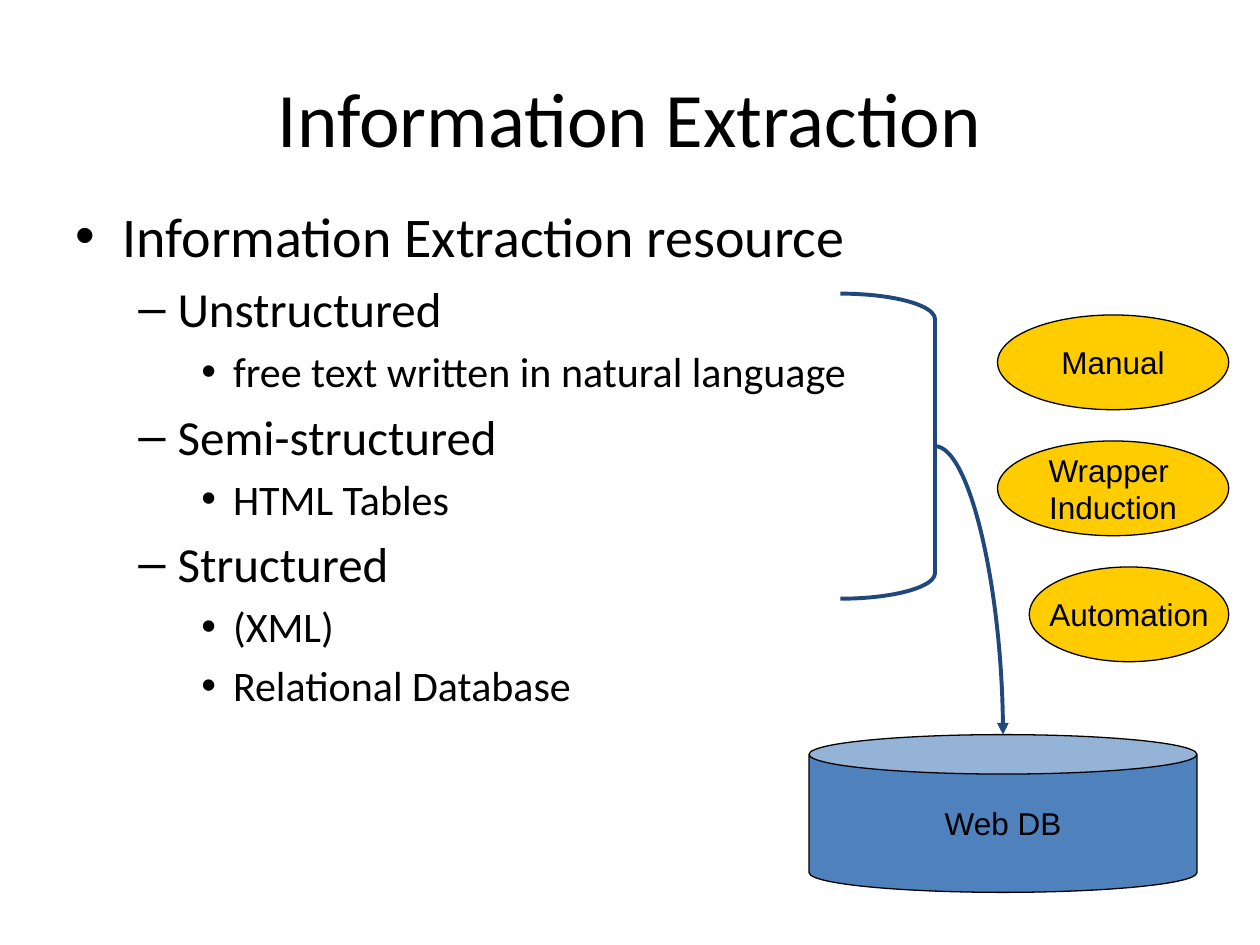
from collections import namedtuple
from dataclasses import dataclass

from lxml import etree
from pptx import Presentation
from pptx.dml.color import RGBColor
from pptx.enum.shapes import MSO_CONNECTOR as Connector, MSO_SHAPE as Shape
from pptx.enum.text import MSO_ANCHOR as Anchor, PP_ALIGN as Align
from pptx.oxml.ns import qn
from pptx.util import Cm, Pt

Box = namedtuple("Box", "left top width height")
Level = namedtuple("Level", "bullet size margin hanging")


@dataclass(frozen=True)
class Theme:
    text: RGBColor = RGBColor(0, 0, 0)
    database: RGBColor = RGBColor(0x4F, 0x81, 0xBD)
    method: RGBColor = RGBColor(0xFF, 0xCC, 0x00)
    flow: RGBColor = RGBColor(0x1F, 0x49, 0x7D)
    body_font: str = "Calibri"
    label_font: str = "Arial"
    title_size: int = 44
    label_size: int = 18
    outline_width: float = 0.75
    flow_width: float = 2.25
    levels: tuple = (
        Level("•", 32, 0.95, 0.95),
        Level("–", 28, 2.06, 0.79),
        Level("•", 24, 3.18, 0.64),
    )


THEME = Theme()

RESOURCES = (
    (0, "Information Extraction resource"),
    (1, "Unstructured"),
    (2, "free text written in natural language"),
    (1, "Semi-structured"),
    (2, "HTML Tables"),
    (1, "Structured"),
    (2, "(XML)"),
    (2, "Relational Database"),
)
METHODS = (  # label lines and ellipse width in cm
    (("Manual",), 4.66),
    (("Wrapper ", "Induction"), 4.66),
    (("Automation",), 4.02),
)


def in_cm(box):
    return [Cm(length) for length in box]


def write_text(paragraph, text, *, size, font, align=Align.LEFT, space_before=0):
    paragraph.text = text
    paragraph.alignment = align
    paragraph.space_before = Pt(space_before)
    paragraph.font.size = Pt(size)
    paragraph.font.name = font
    paragraph.font.color.rgb = THEME.text


def next_paragraph(frame, index):
    return frame.add_paragraph() if index else frame.paragraphs[0]


def set_bullet(paragraph, level):
    properties = paragraph._p.get_or_add_pPr()
    properties.set("marL", str(Cm(level.margin)))
    properties.set("indent", str(-Cm(level.hanging)))
    etree.SubElement(properties, qn("a:buFont"), typeface="Arial")
    etree.SubElement(properties, qn("a:buChar"), char=level.bullet)


def style_line(line, color, width):
    line.color.rgb = color
    line.width = Pt(width)


def add_title(slide, box, text):
    title = slide.shapes.title
    title.left, title.top, title.width, title.height = in_cm(box)
    title.text_frame.vertical_anchor = Anchor.MIDDLE
    write_text(title.text_frame.paragraphs[0], text, size=THEME.title_size,
               font=THEME.body_font, align=Align.CENTER)


def add_outline(slide, box, items):
    frame = slide.shapes.add_textbox(*in_cm(box)).text_frame
    frame.word_wrap = True
    for index, (depth, text) in enumerate(items):
        level = THEME.levels[depth]
        paragraph = next_paragraph(frame, index)
        paragraph.level = depth
        set_bullet(paragraph, level)
        write_text(paragraph, text, size=level.size, font=THEME.body_font,
                   space_before=0.2 * level.size if index else 0)


def add_labelled_shape(slide, kind, box, lines, fill):
    shape = slide.shapes.add_shape(kind, *in_cm(box))
    shape.shadow.inherit = False
    shape.fill.solid()
    shape.fill.fore_color.rgb = fill
    style_line(shape.line, THEME.text, THEME.outline_width)
    frame = shape.text_frame
    frame.word_wrap = False
    frame.vertical_anchor = Anchor.MIDDLE
    for index, text in enumerate(lines):
        write_text(next_paragraph(frame, index), text, size=THEME.label_size,
                   font=THEME.label_font, align=Align.CENTER)
    return shape


def add_methods(slide, box):
    """Stack the method ellipses evenly, flush with the right edge of the box."""
    height = 1.91
    pitch = (box.height - height) / (len(METHODS) - 1)
    for index, (lines, width) in enumerate(METHODS):
        place = Box(box.left + box.width - width, box.top + index * pitch, width, height)
        add_labelled_shape(slide, Shape.OVAL, place, lines, THEME.method)


def add_bracket(slide, box):
    bracket = slide.shapes.add_shape(Shape.RIGHT_BRACKET, *in_cm(box))
    bracket.shadow.inherit = False
    bracket.adjustments[0] = 0.27
    bracket.fill.background()
    style_line(bracket.line, THEME.flow, THEME.flow_width)


def add_flow_arrow(slide, source, target):
    """Curve from the right middle of source to the top middle of target."""
    arrow = slide.shapes.add_connector(
        Connector.CURVE,
        Cm(source.left + source.width), Cm(source.top + source.height / 2),
        Cm(target.left + target.width / 2), Cm(target.top))
    style_line(arrow.line, THEME.flow, THEME.flow_width)
    properties = arrow._element.spPr
    properties.find(qn("a:prstGeom")).set("prst", "curvedConnector2")
    etree.SubElement(arrow.line._get_or_add_ln(), qn("a:tailEnd"), type="triangle")
    etree.SubElement(properties, qn("a:effectLst"))


def add_extraction_flow(slide, box):
    bracket = Box(box.left + 0.63, box.top, 1.91, 6.15)
    database = Box(box.left, box.top + box.height - 3.18, 7.82, 3.18)
    can = add_labelled_shape(slide, Shape.CAN, database, ("Web DB",), THEME.database)
    can.adjustments[0] = 0.25
    add_bracket(slide, bracket)
    add_flow_arrow(slide, bracket, database)
    add_methods(slide, Box(box.left, box.top + 0.43, box.width, 6.99))


def main():
    presentation = Presentation()
    presentation.slide_width, presentation.slide_height = Cm(25.4), Cm(19.05)
    slide = presentation.slides.add_slide(presentation.slide_layouts[5])
    add_title(slide, Box(1.27, 0.76, 22.86, 3.18), "Information Extraction")
    add_outline(slide, Box(1.27, 3.94, 22.86, 12.57), RESOURCES)
    add_extraction_flow(slide, Box(16.31, 5.92, 8.46, 12.07))
    presentation.save("out.pptx")


if __name__ == "__main__":
    main()
